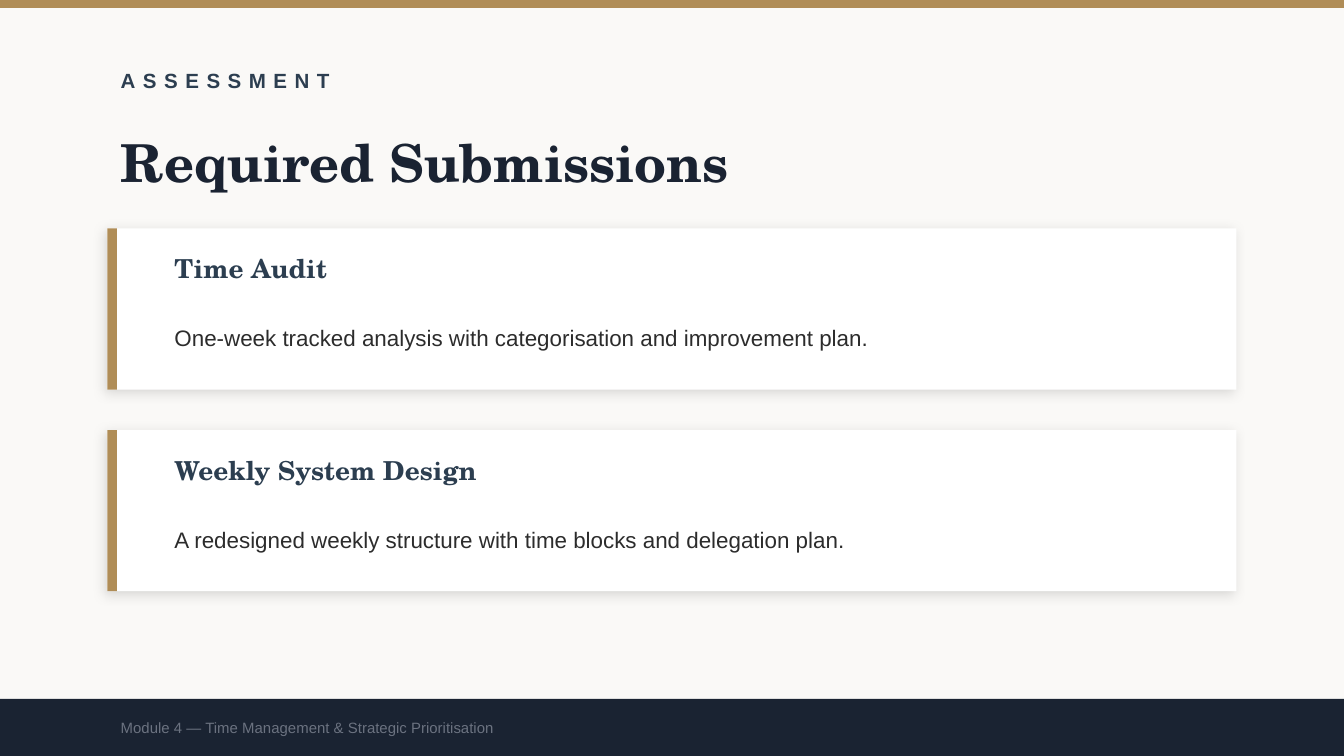
from lxml import etree
from pptx import Presentation, util as u
from pptx.dml.color import RGBColor
from pptx.enum import shapes, text
from pptx.oxml.ns import qn

# Content
EYEBROW = "ASSESSMENT"
TITLE = "Required Submissions"
CARDS = [
    ("Time Audit",
     "One-week tracked analysis with categorisation and improvement plan."),
    ("Weekly System Design",
     "A redesigned weekly structure with time blocks and delegation plan."),
]
FOOTER = "Module 4 — Time Management & Strategic Prioritisation"

# Style
SERIF, SANS = "TeX Gyre Schola", "Arial"
PAPER, WHITE, GOLD = "FAF9F7", "FFFFFF", "B08D57"
NAVY, SLATE, INK, GREY = "1A2332", "2C3E50", "2C2C2C", "6B7280"

# Layout in inches
WIDTH = 10
HEIGHT = WIDTH * 9 / 16
MARGIN, TEXT_WIDTH = 0.8, 8
CARD_TOP, CARD_HEIGHT, CARD_PITCH = 1.7, 1.2, 1.5
CARD_WIDTH = WIDTH - 2 * MARGIN
CARD_INDENT, CARD_TEXT_WIDTH = 0.4, 7.7
FOOTER_TOP, FOOTER_HEIGHT = 5.2, 0.42


def color(value):
    return RGBColor.from_string(value)


def add_bar(slide, area, fill):
    bar = slide.shapes.add_shape(shapes.MSO_SHAPE.RECTANGLE, *map(u.Inches, area))
    bar.shadow.inherit = False
    bar.fill.solid()
    bar.fill.fore_color.rgb = color(fill)
    bar.line.fill.background()
    return bar


def add_shadow(shape, blur=6, distance=2, angle=135, opacity=12):
    effects = shape._element.spPr.find(qn("a:effectLst"))
    shadow = etree.SubElement(
        effects, qn("a:outerShdw"), blurRad=str(u.Pt(blur)), dist=str(u.Pt(distance)),
        dir=str(angle * 60000), algn="bl", rotWithShape="0")
    tint = etree.SubElement(shadow, qn("a:srgbClr"), val="000000")
    etree.SubElement(tint, qn("a:alpha"), val=str(opacity * 1000))


def write(slide, words, area, box=None, size=12, font=SANS, fill=INK,
          bold=False, tracking=None, leading=None):
    left, top, width, height = map(u.Inches, area)
    if box is None:
        box = slide.shapes.add_textbox(left, top, width, height)
    box.left, box.top, box.width, box.height = left, top, width, height
    frame = box.text_frame
    frame.word_wrap = True
    frame.auto_size = text.MSO_AUTO_SIZE.NONE
    frame.vertical_anchor = text.MSO_ANCHOR.MIDDLE
    para = frame.paragraphs[0]
    para.alignment = text.PP_ALIGN.LEFT
    if leading:
        para.line_spacing = leading
    span = para.add_run()
    span.text = words
    span.font.size, span.font.name, span.font.bold = u.Pt(size), font, bold
    span.font.color.rgb = color(fill)
    if tracking:
        span._r.get_or_add_rPr().set("spc", str(tracking * 100))


def add_card(slide, top, heading, detail):
    panel = add_bar(slide, (MARGIN, top, CARD_WIDTH, CARD_HEIGHT), WHITE)
    add_shadow(panel)
    add_bar(slide, (MARGIN, top, 0.07, CARD_HEIGHT), GOLD)
    left = MARGIN + CARD_INDENT
    write(slide, heading, (left, top + 0.12, CARD_TEXT_WIDTH, 0.35),
          size=14, font=SERIF, fill=SLATE, bold=True)
    write(slide, detail, (left, top + 0.5, CARD_TEXT_WIDTH, 0.55), leading=1.4)


def main():
    deck = Presentation()
    deck.slide_width, deck.slide_height = u.Inches(WIDTH), u.Inches(HEIGHT)
    page = deck.slides.add_slide(deck.slide_layouts[5])
    page.background.fill.solid()
    page.background.fill.fore_color.rgb = color(PAPER)

    # Header
    add_bar(page, (0, 0, WIDTH, 0.06), GOLD)
    write(page, EYEBROW, (MARGIN, 0.4, TEXT_WIDTH, 0.4),
          size=11, fill=SLATE, bold=True, tracking=4)
    write(page, TITLE, (MARGIN, 0.9, TEXT_WIDTH, 0.6), box=page.shapes.title,
          size=28, font=SERIF, fill=NAVY, bold=True)

    # Submission cards
    for row, (heading, detail) in enumerate(CARDS):
        add_card(page, CARD_TOP + row * CARD_PITCH, heading, detail)

    # Footer
    add_bar(page, (0, FOOTER_TOP, WIDTH, HEIGHT - FOOTER_TOP), NAVY)
    write(page, FOOTER, (MARGIN, FOOTER_TOP, TEXT_WIDTH, FOOTER_HEIGHT),
          size=8, fill=GREY)

    deck.save("out.pptx")


if __name__ == "__main__":
    main()
